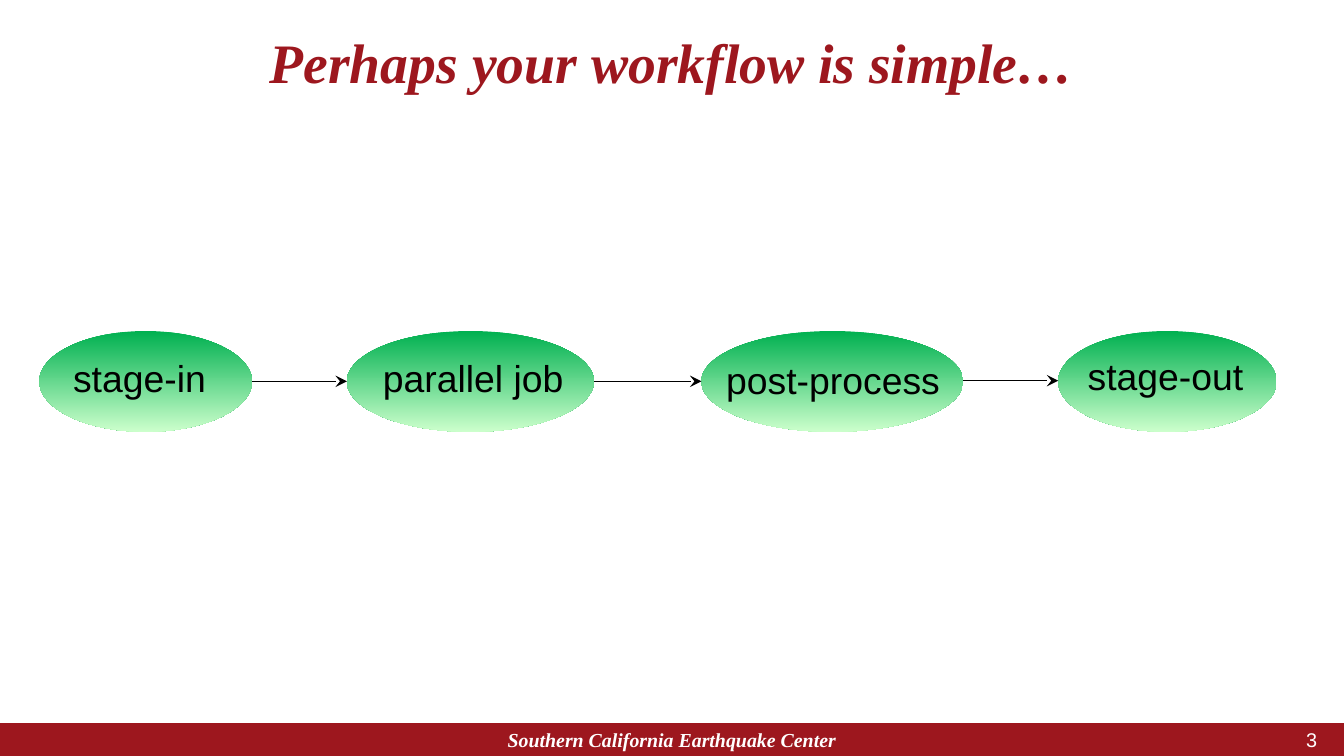
"""Build a slide showing a simple four-step workflow."""
from lxml.etree import SubElement
from pptx import Presentation
from pptx.dml.color import RGBColor
from pptx.enum.shapes import MSO_CONNECTOR, MSO_SHAPE
from pptx.enum.text import MSO_ANCHOR, MSO_AUTO_SIZE, PP_ALIGN
from pptx.oxml.ns import qn
from pptx.util import Cm, Pt

TITLE = "Perhaps your workflow is simple…"
FOOTER = "Southern California Earthquake Center"
PAGE_NUMBER = "3"

# step name, ellipse left and width, label left, top and width
STEPS = [
    ("stage-in", 1.19, 6.43, 1.96, 10.6, 5.41),
    ("parallel job", 10.49, 7.47, 11.33, 10.62, 6.78),
    ("post-process", 21.21, 7.92, 21.71, 10.67, 7.44),
    ("stage-out", 32.0, 6.6, 32.64, 10.55, 5.92),
]
STEP_TOP, STEP_HEIGHT, LABEL_HEIGHT = 10.01, 3.05, 1.63
ARROW_HEIGHTS = [11.53, 11.53, 11.51]

SLIDE_WIDTH, SLIDE_HEIGHT, BAR_HEIGHT = 40.64, 22.86, 0.99
RED, WHITE, BLACK = "9D171E", "FFFFFF", "000000"
GREEN, PALE_GREEN = "00B050", "CCFFCC"
SANS, SERIF = "Arial", "Times New Roman"


def color(value):
    return RGBColor.from_string(value)


def write(box, text, size, font, fill, align=PP_ALIGN.LEFT, strong=False, margins=(0.25, 0.13)):
    frame = box.text_frame
    frame.text = text
    frame.word_wrap = True
    frame.auto_size = MSO_AUTO_SIZE.NONE
    frame.margin_left = frame.margin_right = Cm(margins[0])
    frame.margin_top = frame.margin_bottom = Cm(margins[1])
    para = frame.paragraphs[0]
    para.alignment = align
    span = para.runs[0]
    span.font.size = Pt(size)
    span.font.name = font
    span.font.bold = span.font.italic = strong
    span.font.color.rgb = color(fill)
    return frame


def add_text(page, place, *args, **options):
    box = page.shapes.add_textbox(*map(Cm, place))
    return write(box, *args, **options)


def add_shape(page, kind, *place):
    shape = page.shapes.add_shape(kind, *map(Cm, place))
    shape.shadow.inherit = False
    shape.line.fill.background()
    return shape


def add_step(page, name, left, width, label_left, label_top, label_width):
    ellipse = add_shape(page, MSO_SHAPE.OVAL, left, STEP_TOP, width, STEP_HEIGHT)
    ellipse.fill.gradient()
    ellipse.fill.gradient_angle = 270
    for stop, shade in zip(ellipse.fill.gradient_stops, (GREEN, PALE_GREEN)):
        stop.color.rgb = color(shade)
    add_text(page, (label_left, label_top, label_width, LABEL_HEIGHT), name, 32, SANS, BLACK)


def add_arrow(page, start, end, height):
    arrow = page.shapes.add_connector(
        MSO_CONNECTOR.STRAIGHT, Cm(start), Cm(height), Cm(end), Cm(height))
    arrow.line.color.rgb = color(BLACK)
    arrow.line.width = Pt(1)
    properties = arrow.element.spPr
    SubElement(properties.find(qn("a:ln")), qn("a:tailEnd"), type="stealth", w="lg", len="lg")
    SubElement(properties, qn("a:effectLst"))


def main():
    deck = Presentation()
    deck.slide_width, deck.slide_height = Cm(SLIDE_WIDTH), Cm(SLIDE_HEIGHT)
    page = deck.slides.add_slide(deck.slide_layouts[5])

    bar = add_shape(page, MSO_SHAPE.RECTANGLE,
                    0, SLIDE_HEIGHT - BAR_HEIGHT, SLIDE_WIDTH, BAR_HEIGHT)
    bar.fill.solid()
    bar.fill.fore_color.rgb = color(RED)

    title = page.shapes.title
    title.left, title.top, title.width, title.height = map(Cm, (1.02, 0.91, 38.6, 2.13))
    frame = write(title, TITLE, 47.7, SERIF, RED, PP_ALIGN.CENTER, True, (0.3, 0.15))
    frame.vertical_anchor = MSO_ANCHOR.TOP
    frame.paragraphs[0].line_spacing = 0.9

    for step in STEPS:
        add_step(page, *step)
    for before, after, height in zip(STEPS, STEPS[1:], ARROW_HEIGHTS):
        add_arrow(page, before[1] + before[2], after[1], height)

    number = add_text(page, (36.32, 22.07, 3.81, 0.61), PAGE_NUMBER, 17, SANS, WHITE,
                      PP_ALIGN.RIGHT, margins=(0.3, 0.15))
    footer = add_text(page, (13.46, 21.85, 13.72, 1.0), FOOTER, 17, SERIF, WHITE,
                      PP_ALIGN.CENTER, True, (0.3, 0.15))
    number.vertical_anchor = footer.vertical_anchor = MSO_ANCHOR.MIDDLE

    deck.save("out.pptx")


if __name__ == "__main__":
    main()
